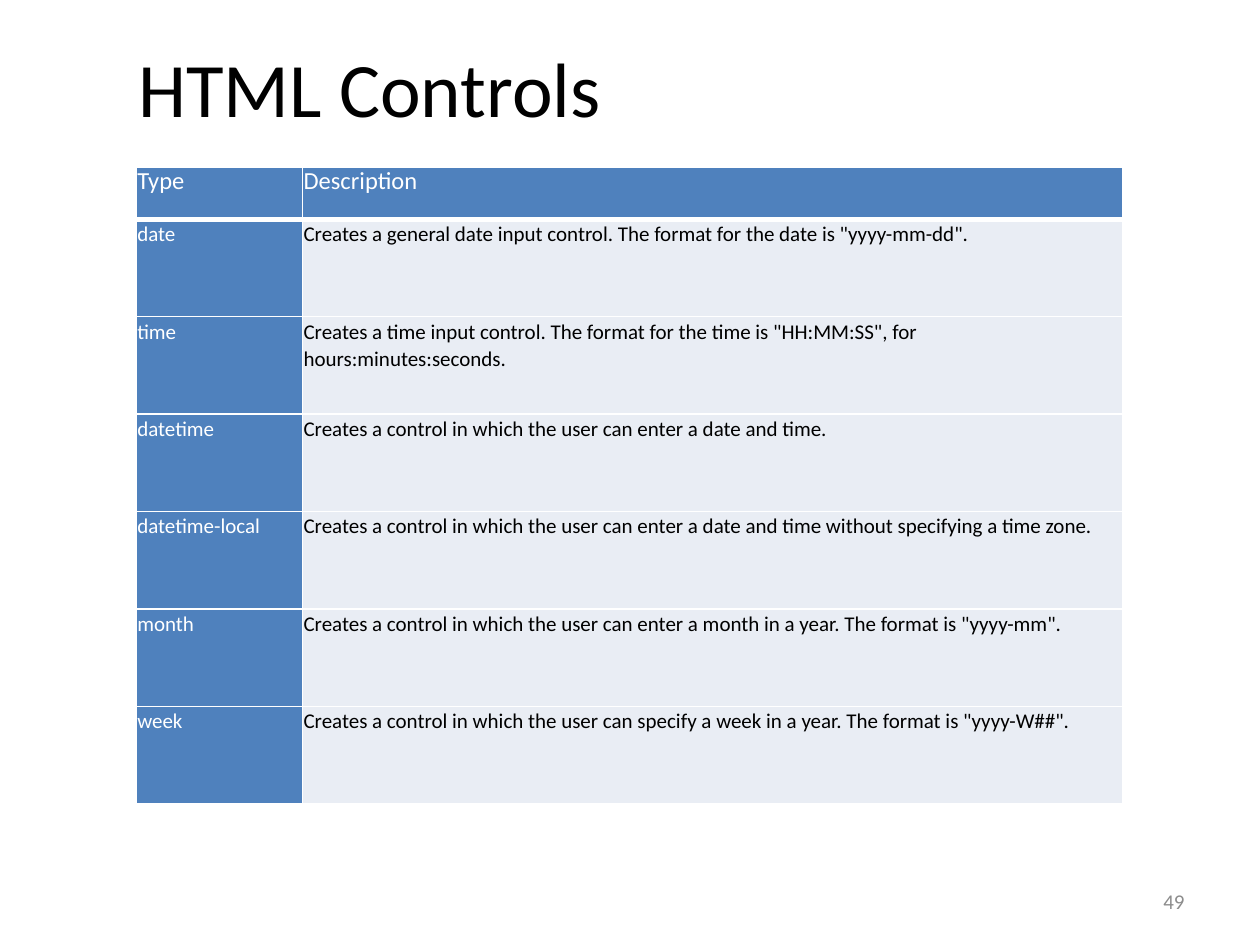
from pptx import Presentation
from pptx.dml.color import RGBColor
from pptx.enum.text import MSO_ANCHOR as Anchor, PP_ALIGN as Align
from pptx.oxml import parse_xml
from pptx.oxml.ns import nsdecls
from pptx.util import Inches, Pt

TITLE = "HTML Controls"
PAGE_NUMBER = "49"
HEADER = ("Type", "Description")
CONTROLS = [
    ("date", 'Creates a general date input control. The format for the date is "yyyy-mm-dd".'),
    ("time", 'Creates a time input control. The format for the time is "HH:MM:SS", for hours:minutes:seconds.'),
    ("datetime", "Creates a control in which the user can enter a date and time."),
    ("datetime-local", "Creates a control in which the user can enter a date and time without specifying a time zone."),
    ("month", 'Creates a control in which the user can enter a month in a year. The format is "yyyy-mm".'),
    ("week", 'Creates a control in which the user can specify a week in a year. The format is "yyyy-W##".'),
]

FONT = "Calibri"
BLUE, PALE, WHITE, BLACK, GREY = "4F81BD", "E9EDF4", "FFFFFF", "000000", "8C8C8C"
TABLE_LEFT, TABLE_TOP = 1.08, 1.33
COLUMN_WIDTHS = (1.32, 6.51)
HEADER_HEIGHT, ROW_HEIGHT = 0.41, 0.774


def color(hex_string):
    return RGBColor.from_string(hex_string)


def style_text(para, size, hex_string):
    for span in para.runs:
        span.font.name = FONT
        span.font.size = Pt(size)
        span.font.color.rgb = color(hex_string)


def add_text(page, text, place, size, hex_string, align=Align.LEFT):
    box = page.shapes.add_textbox(*map(Inches, place))
    frame = box.text_frame
    frame.word_wrap = True
    frame.vertical_anchor = Anchor.MIDDLE
    frame.text = text
    frame.paragraphs[0].alignment = align
    style_text(frame.paragraphs[0], size, hex_string)


def add_borders(cell, bottom_width):
    properties = cell._tc.get_or_add_tcPr()
    for side, width in (("L", 1), ("R", 1), ("T", 1), ("B", bottom_width)):
        properties.append(parse_xml(
            f'<a:ln{side} {nsdecls("a")} w="{Pt(width)}"><a:solidFill>'
            f'<a:srgbClr val="{WHITE}"/></a:solidFill></a:ln{side}>'))


def fill_cell(cell, text, is_header, is_label):
    add_borders(cell, 3 if is_header else 1)
    cell.fill.solid()
    cell.fill.fore_color.rgb = color(BLUE if is_label else PALE)
    cell.margin_left = cell.margin_right = Inches(0.01)
    cell.margin_top = cell.margin_bottom = 0
    cell.vertical_anchor = Anchor.TOP
    cell.text_frame.text = text
    para = cell.text_frame.paragraphs[0]
    para.line_spacing = Pt(16)
    para.space_after = Pt(14 if is_header else 7)
    style_text(para, 14 if is_header else 12, WHITE if is_label else BLACK)


def add_controls_table(page):
    rows = [HEADER, *CONTROLS]
    heights = [HEADER_HEIGHT] + [ROW_HEIGHT] * len(CONTROLS)
    table = page.shapes.add_table(
        len(rows), len(HEADER), Inches(TABLE_LEFT), Inches(TABLE_TOP),
        Inches(sum(COLUMN_WIDTHS)), Inches(sum(heights))).table
    for column, width in zip(table.columns, COLUMN_WIDTHS):
        column.width = Inches(width)
    for r, (texts, height) in enumerate(zip(rows, heights)):
        table.rows[r].height = Inches(height)
        for c, text in enumerate(texts):
            fill_cell(table.cell(r, c), text, r == 0, r == 0 or c == 0)


def main():
    deck = Presentation()
    deck.slide_width, deck.slide_height = Inches(10), Inches(7.5)
    page = deck.slides.add_slide(deck.slide_layouts[6])
    # Title, table and page number
    add_text(page, TITLE, (1, 0.13, 8.5, 1.12), 44, BLACK)
    add_controls_table(page)
    add_text(page, PAGE_NUMBER, (7.17, 6.95, 2.33, 0.4), 12, GREY, Align.RIGHT)
    deck.save("out.pptx")


if __name__ == "__main__":
    main()
